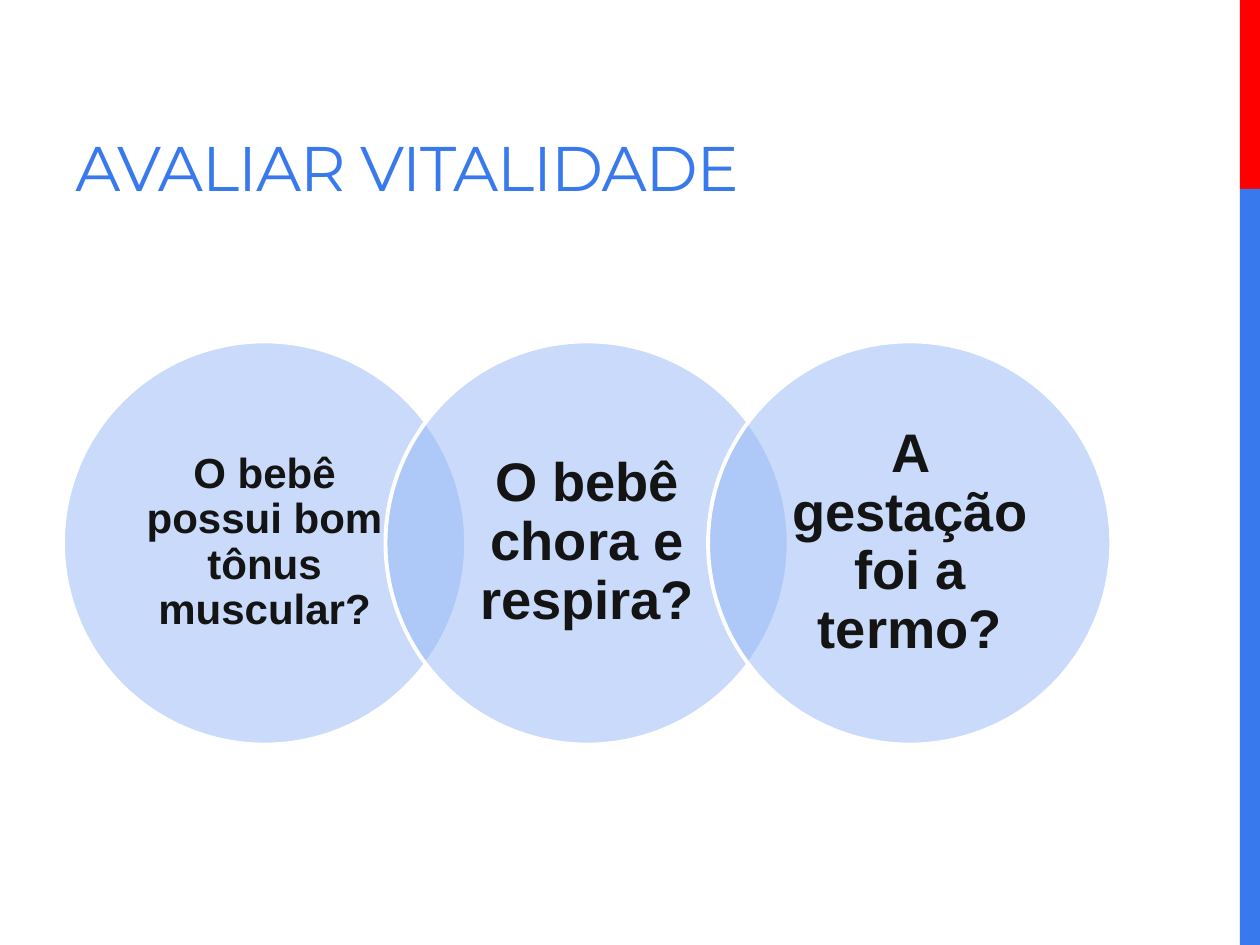
import pptx
import pptx.dml.color
import pptx.enum.shapes
import pptx.enum.text
import pptx.util
import lxml.etree
from pptx.oxml.ns import qn

Inches = pptx.util.Inches
Pt = pptx.util.Pt
RGBColor = pptx.dml.color.RGBColor
Shape = pptx.enum.shapes.MSO_SHAPE
Anchor = pptx.enum.text.MSO_ANCHOR
Align = pptx.enum.text.PP_ALIGN

RED = RGBColor(0xFF, 0x00, 0x00)
BLUE = RGBColor(0x39, 0x79, 0xEE)
PALE = RGBColor(0x94, 0xB7, 0xF6)
DARK = RGBColor(0x14, 0x14, 0x14)
WHITE = RGBColor(0xFF, 0xFF, 0xFF)


class Deck:
    head = "Montserrat"
    body = "Arial"

    def __init__(self, slide):
        self.slide = slide

    def shape(self, kind, box, color):
        item = self.slide.shapes.add_shape(kind, *map(Inches, box))
        item.shadow.inherit = False
        item.fill.solid()
        item.fill.fore_color.rgb = color
        item.line.fill.background()
        return item

    def bar(self, top, height, color):
        self.shape(Shape.RECTANGLE, (9.84, top, 0.16, height), color)

    def circle(self, left, top, size):
        """Half-transparent disc with a white rim."""
        disc = self.shape(Shape.OVAL, (left, top, size, size), PALE)
        tint = disc.element.spPr.find(".//" + qn("a:srgbClr"))
        lxml.etree.SubElement(tint, qn("a:alpha"), val="50000")
        disc.line.color.rgb = WHITE
        disc.line.width = Pt(2.25)

    def text(self, box, words, size, font, color, anchor):
        item = self.slide.shapes.add_textbox(*map(Inches, box))
        frame = item.text_frame
        frame.word_wrap = True
        frame.vertical_anchor = anchor
        run = frame.paragraphs[0].add_run()
        run.text = words
        run.font.name = font
        run.font.size = Pt(size)
        run.font.color.rgb = color
        return frame, run

    def title(self, words):
        box = (0.5, 0.17, 8.36, 1.5)
        _, run = self.text(box, words, 36, self.head, BLUE, Anchor.BOTTOM)
        run.font._element.set("spc", "-60")

    def label(self, left, top, size, words, points):
        box = (left, top, size, size)
        frame, run = self.text(box, words, points, self.body, DARK,
                               Anchor.MIDDLE)
        run.font.bold = True
        frame.margin_left = frame.margin_right = Inches(0.18)
        frame.margin_top = frame.margin_bottom = Inches(0.04)
        frame.paragraphs[0].alignment = Align.CENTER
        frame.paragraphs[0].line_spacing = 0.9


def main():
    prs = pptx.Presentation()
    prs.slide_width = Inches(10)
    prs.slide_height = Inches(7.5)
    deck = Deck(prs.slides.add_slide(prs.slide_layouts[6]))

    deck.bar(0, 1.5, RED)
    deck.bar(1.5, 6, BLUE)
    deck.title("AVALIAR VITALIDADE")

    left, top, size, step = 0.5, 2.71, 3.2, 2.56
    inset = 0.47
    asks = [
        ("O bebê possui bom tônus muscular?", 24),
        ("O bebê chora e respira?", 31),
        ("A gestação foi a termo?", 31),
    ]
    for i, (words, points) in enumerate(asks):
        x = left + i * step
        deck.circle(x, top, size)
        deck.label(x + inset, top + inset, size - 2 * inset, words, points)

    prs.save("out.pptx")


if __name__ == "__main__":
    main()
